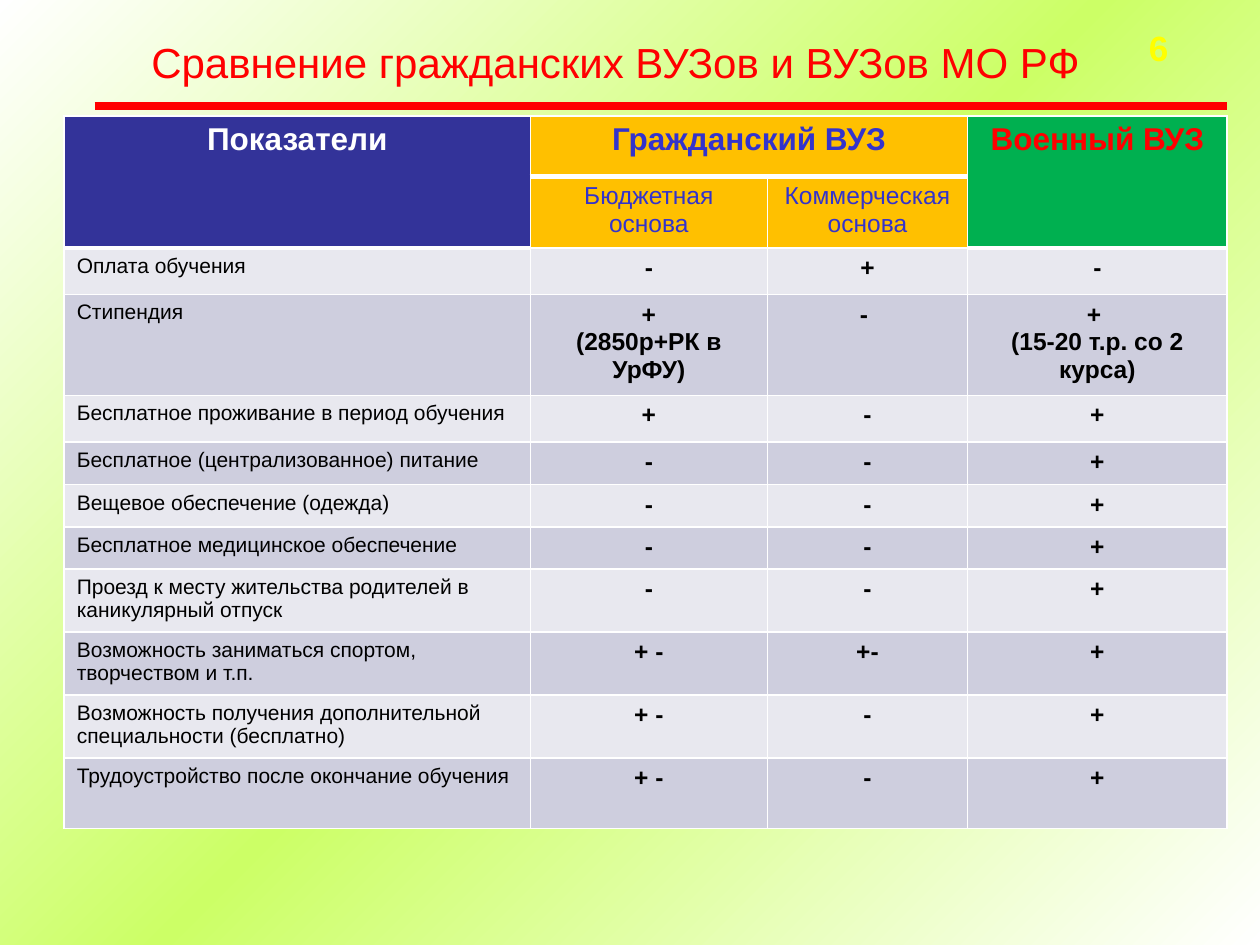
from copy import deepcopy

from lxml.etree import SubElement as Sub
from pptx import Presentation
from pptx.dml.color import RGBColor
from pptx.enum.shapes import MSO_CONNECTOR as Line
from pptx.enum.text import MSO_ANCHOR as Anchor, PP_ALIGN as Align
from pptx.oxml.ns import qn
from pptx.util import Inches, Pt

RED, WHITE, BLUE, GOLD = "FF0000", "FFFFFF", "3333CC", "FFC000"
BANDS = "E8E8EF", "CECEDE"
COLS = 3.7, 1.88, 1.59, 2.06
TALL = 0.48, 0.56, 0.37, 0.8, 0.37, 0.34, 0.33, 0.33, 0.5, 0.5, 0.5, 0.56
HEADS = [
    (0, 0, "Показатели", "333399", WHITE, 18),
    (0, 1, "Гражданский ВУЗ", GOLD, BLUE, 18),
    (0, 3, "Военный ВУЗ", "00B050", RED, 18),
    (1, 1, "Бюджетная основа", GOLD, BLUE, 14),
    (1, 2, "Коммерческая основа", GOLD, BLUE, 14),
]
ROWS = [
    ("Оплата обучения", "-", "+", "-"),
    ("Стипендия", "+\n(2850р+РК в УрФУ)", "- ", "+ \n(15-20 т.р. со 2 курса)"),
    ("Бесплатное проживание в период обучения", "+", "-", "+"),
    ("Бесплатное (централизованное) питание", "-", "-", "+"),
    ("Вещевое обеспечение (одежда)", "-", "-", "+"),
    ("Бесплатное медицинское обеспечение", "-", "-", "+"),
    ("Проезд к месту жительства родителей в каникулярный отпуск", "-", "-", "+"),
    ("Возможность заниматься спортом, творчеством и т.п.", "+ -", "+-", "+"),
    ("Возможность получения дополнительной специальности (бесплатно)", "+ -", "-", "+"),
    ("Трудоустройство после окончание обучения", "+ -", "-", "+"),
]


def tint(code):
    """Turn a hex string into a colour."""
    return RGBColor.from_string(code)


def write(frame, text, size=14, color="000000", bold=False, align=Align.CENTER):
    """Fill a text frame, one paragraph to each line."""
    frame.text = text
    frame.word_wrap = True
    for para in frame.paragraphs:
        para.alignment = align
        for run in para.runs:
            font = run.font
            font.name, font.size, font.bold = "Arial", Pt(size), bold
            font.color.rgb = tint(color)


def place(shape, box):
    """Move a shape to a box given in inches."""
    shape.left, shape.top, shape.width, shape.height = map(Inches, box)


def back(slide):
    """Paint the diagonal gradient behind the slide."""
    fill = slide.background.fill
    fill.gradient()
    fill.gradient_angle = 315
    stops = slide._element.xpath(".//p:bg//a:gsLst")[0]
    stops.append(deepcopy(stops[0]))
    for stop, pos, code in zip(fill.gradient_stops, (0, 0.5, 1), (WHITE, "CCFF66", WHITE)):
        stop.position = pos
        stop.color.rgb = tint(code)


def header(slide, box):
    """Place the title, the page number and the red rule in a box."""
    left, top, width, height = box
    rule = slide.shapes.add_connector(
        Line.STRAIGHT, *map(Inches, (left, top + height, left + width, top + height)))
    rule.line.color.rgb = tint(RED)
    rule.line.width = Pt(4.5)
    Sub(rule._element.spPr, qn("a:effectLst"))
    title = slide.shapes.title
    place(title, (left + 0.16, top + 0.08, 7.95, 0.5))
    write(title.text_frame, "Сравнение гражданских ВУЗов и ВУЗов МО РФ", size=24, color=RED)
    title.text_frame.vertical_anchor = Anchor.MIDDLE
    page = slide.shapes.add_textbox(*map(Inches, (left + 8.27, top, 0.95, 0.52)))
    write(page.text_frame, "6", size=20, color="FFFF00", bold=True, align=Align.LEFT)


def edge(cell, row, col):
    """Draw white cell borders, thick under the main heads."""
    low = row == 0 or row == 1 and col in (0, 3)
    high = row == 1 and col in (1, 2) or row == 2 and col in (0, 3)
    props = cell._tc.get_or_add_tcPr()
    for side, wide in ("L", 1), ("R", 1), ("T", 3 if high else 1), ("B", 3 if low else 1):
        line = Sub(props, qn("a:ln" + side), w=str(Pt(wide)))
        Sub(Sub(line, qn("a:solidFill")), qn("a:srgbClr"), val=WHITE)


def paint(cell, code):
    """Give a cell a plain fill."""
    cell.fill.solid()
    cell.fill.fore_color.rgb = tint(code)


def chart(slide, box):
    """Build the comparison table in a box."""
    grid = slide.shapes.add_table(len(TALL), len(COLS), *map(Inches, box)).table
    for col, width in zip(grid.columns, COLS):
        col.width = Inches(width)
    for row, height in zip(grid.rows, TALL):
        row.height = Inches(height)
    for row in range(len(TALL)):
        for col in range(len(COLS)):
            edge(grid.cell(row, col), row, col)
            paint(grid.cell(row, col), BANDS[row % 2])
    for start, end in ((0, 0), (1, 0)), ((0, 1), (0, 2)), ((0, 3), (1, 3)):
        grid.cell(*start).merge(grid.cell(*end))
    for row, col, text, fill, color, size in HEADS:
        paint(grid.cell(row, col), fill)
        write(grid.cell(row, col).text_frame, text, size=size, color=color, bold=row == 0)
    for row, (name, *marks) in enumerate(ROWS, 2):
        write(grid.cell(row, 0).text_frame, name, size=12, align=Align.LEFT)
        for col, mark in enumerate(marks, 1):
            write(grid.cell(row, col).text_frame, mark, bold=True)


def main():
    """Build and save the slide."""
    deck = Presentation()
    deck.slide_width, deck.slide_height = Inches(10), Inches(7.5)
    slide = deck.slides.add_slide(deck.slide_layouts[5])
    back(slide)
    header(slide, (0.75, 0.16, 8.99, 0.68))
    chart(slide, (0.51, 0.92, sum(COLS), sum(TALL)))
    deck.save("out.pptx")


if __name__ == "__main__":
    main()
